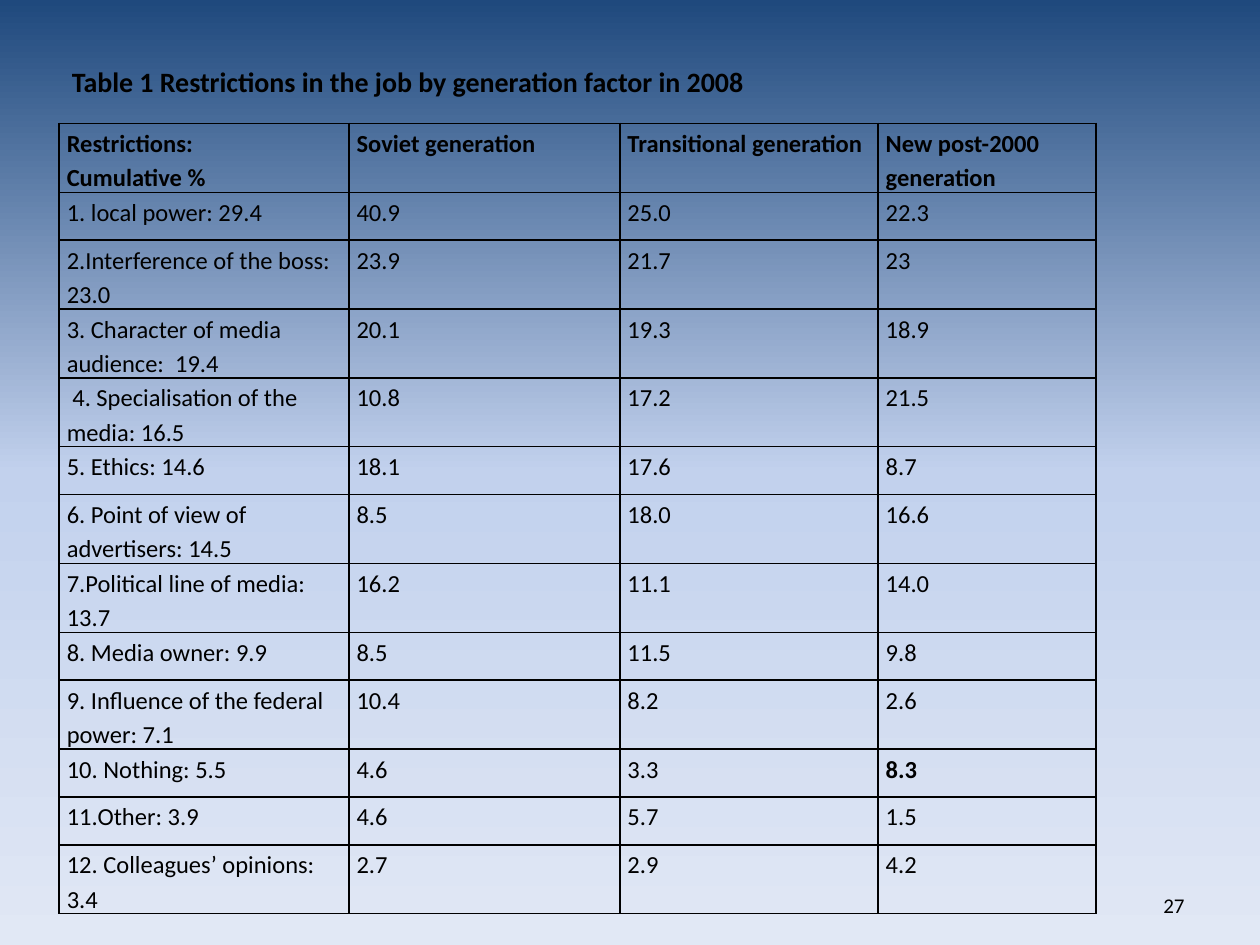
"""Build the slide with the table of job restrictions by generation."""
import copy

import pptx
import pptx.enum.text
import pptx.oxml.ns
import pptx.oxml.xmlchemy
import pptx.util
from lxml import etree
from pptx.util import Inches

ALIGN = pptx.enum.text.PP_ALIGN
ANCHOR = pptx.enum.text.MSO_ANCHOR
AUTO_SIZE = pptx.enum.text.MSO_AUTO_SIZE
qn = pptx.oxml.ns.qn

COLOURS = {"ink": "000000", "top": "1F497D", "middle": "C2D1ED", "bottom": "E1E8F5"}
FONT = "Calibri"
COLUMN_WIDTHS = [2.3, 2.15, 2.05, 1.73]
HEADER_HEIGHT, ROW_HEIGHT = 0.41, 0.38
BOLD_VALUE = (10, 3)
RESTRICTIONS = [
    ("Restrictions:\nCumulative %", "Soviet generation", "Transitional generation",
     "New post-2000 generation"),
    ("1. local power: 29.4", "40.9", "25.0", "22.3"),
    ("2.Interference of the boss: 23.0", "23.9", "21.7", "23"),
    ("3. Character of media audience:  19.4", "20.1", "19.3", "18.9"),
    (" 4. Specialisation of the media: 16.5", "10.8", "17.2", "21.5"),
    ("5. Ethics: 14.6", "18.1", "17.6", "8.7"),
    ("6. Point of view of advertisers: 14.5", "8.5", "18.0", "16.6"),
    ("7.Political line of media: 13.7", "16.2", "11.1", "14.0"),
    ("8. Media owner: 9.9", "8.5", "11.5", "9.8"),
    ("9. Influence of the federal power: 7.1", "10.4", "8.2", "2.6"),
    ("10. Nothing: 5.5", "4.6", "3.3", "8.3"),
    ("11.Other: 3.9", "4.6", "5.7", "1.5"),
    ("12. Colleagues’ opinions: 3.4", "2.7", "2.9", "4.2"),
]


def write(frame, text, size=14, bold=False, align=ALIGN.LEFT, spacing=1.0):
    frame.text = text
    for paragraph in frame.paragraphs:
        paragraph.alignment = align
        paragraph.line_spacing = spacing
        for run in paragraph.runs:
            run.font.name = FONT
            run.font.size = pptx.util.Pt(size)
            run.font.bold = bold
            run.font.color.rgb = pptx.dml.color.RGBColor.from_string(COLOURS["ink"])


def place(shape, left, top, width, height):
    shape.left, shape.top = Inches(left), Inches(top)
    shape.width, shape.height = Inches(width), Inches(height)


def paint_background(slide):
    fill = slide.background.fill
    fill.gradient()
    fill.gradient_angle = 270
    stops = next(slide.element.iter(qn("a:gsLst")))
    stops.insert(1, copy.deepcopy(stops[0]))
    for stop, position, name in zip(fill.gradient_stops, (0, 0.5, 1),
                                    ("top", "middle", "bottom")):
        stop.position = position
        stop.color.rgb = pptx.dml.color.RGBColor.from_string(COLOURS[name])


def add_heading(slide, text):
    heading = slide.shapes.title
    place(heading, 0.47, 0.46, 5.59, 0.37)
    frame = heading.text_frame
    write(frame, text, size=16, bold=True, align=ALIGN.JUSTIFY)
    frame.word_wrap = False
    frame.auto_size = AUTO_SIZE.SHAPE_TO_FIT_TEXT
    frame.vertical_anchor = ANCHOR.MIDDLE


def add_page_number(slide, number):
    box = slide.shapes.add_textbox(Inches(7.17), Inches(6.83), Inches(2.33), Inches(0.5))
    frame = box.text_frame
    frame.word_wrap = True
    frame.vertical_anchor = ANCHOR.BOTTOM
    write(frame, number, size=12, align=ALIGN.RIGHT)


def draw_borders(cell):
    properties = cell._tc.get_or_add_tcPr()
    for side in ("lnL", "lnR", "lnT", "lnB"):
        line = etree.SubElement(properties, qn(f"a:{side}"), w=str(pptx.util.Pt(1)))
        solid = etree.SubElement(line, qn("a:solidFill"))
        etree.SubElement(solid, qn("a:srgbClr"), val=COLOURS["ink"])


def format_cell(cell, text, bold):
    cell.margin_left = cell.margin_right = Inches(0.06)
    cell.margin_top, cell.margin_bottom = Inches(0.01), 0
    draw_borders(cell)
    cell.fill.background()
    write(cell.text_frame, text, bold=bold, spacing=1.15)


def add_restrictions(slide):
    heights = [HEADER_HEIGHT] + [ROW_HEIGHT] * (len(RESTRICTIONS) - 1)
    table = slide.shapes.add_table(
        len(heights), len(COLUMN_WIDTHS), Inches(0.47), Inches(0.98),
        Inches(sum(COLUMN_WIDTHS)), Inches(sum(heights))).table
    table.horz_banding = False
    for column, width in zip(table.columns, COLUMN_WIDTHS):
        column.width = Inches(width)
    for r, (row, height) in enumerate(zip(table.rows, heights)):
        row.height = Inches(height)
        for c, text in enumerate(RESTRICTIONS[r]):
            format_cell(table.cell(r, c), text, bold=r == 0 or (r, c) == BOLD_VALUE)


def main():
    deck = pptx.Presentation()
    deck.slide_width, deck.slide_height = Inches(10), Inches(7.5)
    slide = deck.slides.add_slide(deck.slide_layouts[5])
    paint_background(slide)
    add_page_number(slide, "27")
    add_heading(slide, "Table 1 Restrictions in the job by generation factor in 2008")
    add_restrictions(slide)
    deck.save("out.pptx")


if __name__ == "__main__":
    main()
